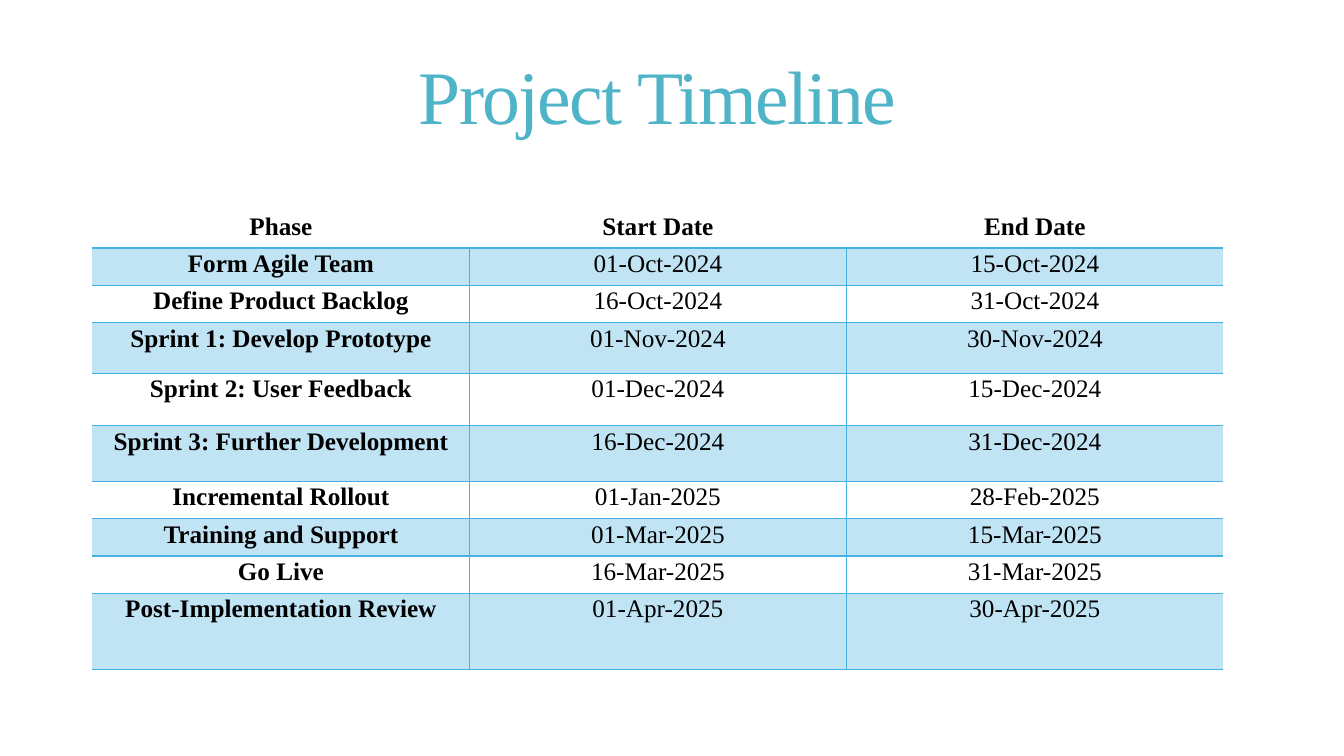
from lxml import etree
from pptx import Presentation
from pptx.dml.color import RGBColor
from pptx.enum.text import MSO_ANCHOR, PP_ALIGN
from pptx.oxml.ns import qn
from pptx.util import Cm, Pt

CENTER = PP_ALIGN.CENTER
MIDDLE = MSO_ANCHOR.MIDDLE
FONT = "Times New Roman"
COLORS = {"title": "50B4C8", "text": "000000", "line": "45B0E1",
          "band": "C1E4F5", "white": "FFFFFF"}


def add_text(paragraph, text, size, color, bold=False):
    paragraph.alignment = CENTER
    run = paragraph.add_run()
    run.text = text
    run.font.name = FONT
    run.font.size = Pt(size)
    run.font.bold = bold
    run.font.color.rgb = RGBColor.from_string(COLORS[color])
    return run


def add_border(cell, side, width):
    """Draw one cell border; a width of 0 hides it."""
    properties = cell._tc.get_or_add_tcPr()
    line = etree.SubElement(properties, qn(f"a:ln{side}"), w=str(Pt(width)))
    if width:
        fill = etree.SubElement(line, qn("a:solidFill"))
        etree.SubElement(fill, qn("a:srgbClr"), val=COLORS["line"])
    else:
        etree.SubElement(line, qn("a:noFill"))


presentation = Presentation()
presentation.slide_width = Cm(33.87)
presentation.slide_height = Cm(19.05)
slide = presentation.slides.add_slide(presentation.slide_layouts[6])

# Title
title = slide.shapes.add_textbox(Cm(1.6), Cm(0.64), Cm(29.92), Cm(3.81))
title_frame = title.text_frame
title_frame.word_wrap = True
title_frame.vertical_anchor = MIDDLE
title_paragraph = title_frame.paragraphs[0]
title_paragraph.line_spacing = 0.85
title_run = add_text(title_paragraph, "Project Timeline", 54, "title")
title_run.font._element.set("spc", "-120")

# Phases with their dates and row heights in centimetres
timeline = [
    ("Phase", "Start Date", "End Date", 0.94),
    ("Form Agile Team", "01-Oct-2024", "15-Oct-2024", 0.94),
    ("Define Product Backlog", "16-Oct-2024", "31-Oct-2024", 0.94),
    ("Sprint 1: Develop Prototype", "01-Nov-2024", "30-Nov-2024", 1.28),
    ("Sprint 2: User Feedback", "01-Dec-2024", "15-Dec-2024", 1.32),
    ("Sprint 3: Further Development", "16-Dec-2024", "31-Dec-2024", 1.4),
    ("Incremental Rollout", "01-Jan-2025", "28-Feb-2025", 0.94),
    ("Training and Support", "01-Mar-2025", "15-Mar-2025", 0.94),
    ("Go Live", "16-Mar-2025", "31-Mar-2025", 0.94),
    ("Post-Implementation Review", "01-Apr-2025", "30-Apr-2025", 1.92),
]
column_count = 3
table = slide.shapes.add_table(
    len(timeline), column_count, Cm(2.33), Cm(5.31), Cm(28.5), Cm(11.56)).table
table.horz_banding = False
for column in table.columns:
    column.width = Cm(9.5)

# Table cells
for row_index, (*texts, height) in enumerate(timeline):
    table.rows[row_index].height = Cm(height)
    is_header = row_index == 0
    for column_index, text in enumerate(texts):
        cell = table.cell(row_index, column_index)
        cell.margin_left = cell.margin_right = Cm(0.19)
        cell.margin_top = cell.margin_bottom = 0

        # Inner grid and row rules, with a heavier rule below the header
        has_left = not is_header and column_index > 0
        has_right = not is_header and column_index < column_count - 1
        add_border(cell, "L", 1 if has_left else 0)
        add_border(cell, "R", 1 if has_right else 0)
        add_border(cell, "T", {0: 0, 1: 1.5}.get(row_index, 1))
        add_border(cell, "B", 1.5 if is_header else 1)
        cell.fill.solid()
        fill_name = "band" if row_index % 2 else "white"
        cell.fill.fore_color.rgb = RGBColor.from_string(COLORS[fill_name])

        paragraph = cell.text_frame.paragraphs[0]
        paragraph.line_spacing = 1.07
        paragraph.space_after = Pt(8)
        add_text(paragraph, text, 18, "text", is_header or column_index == 0)

presentation.save("out.pptx")
